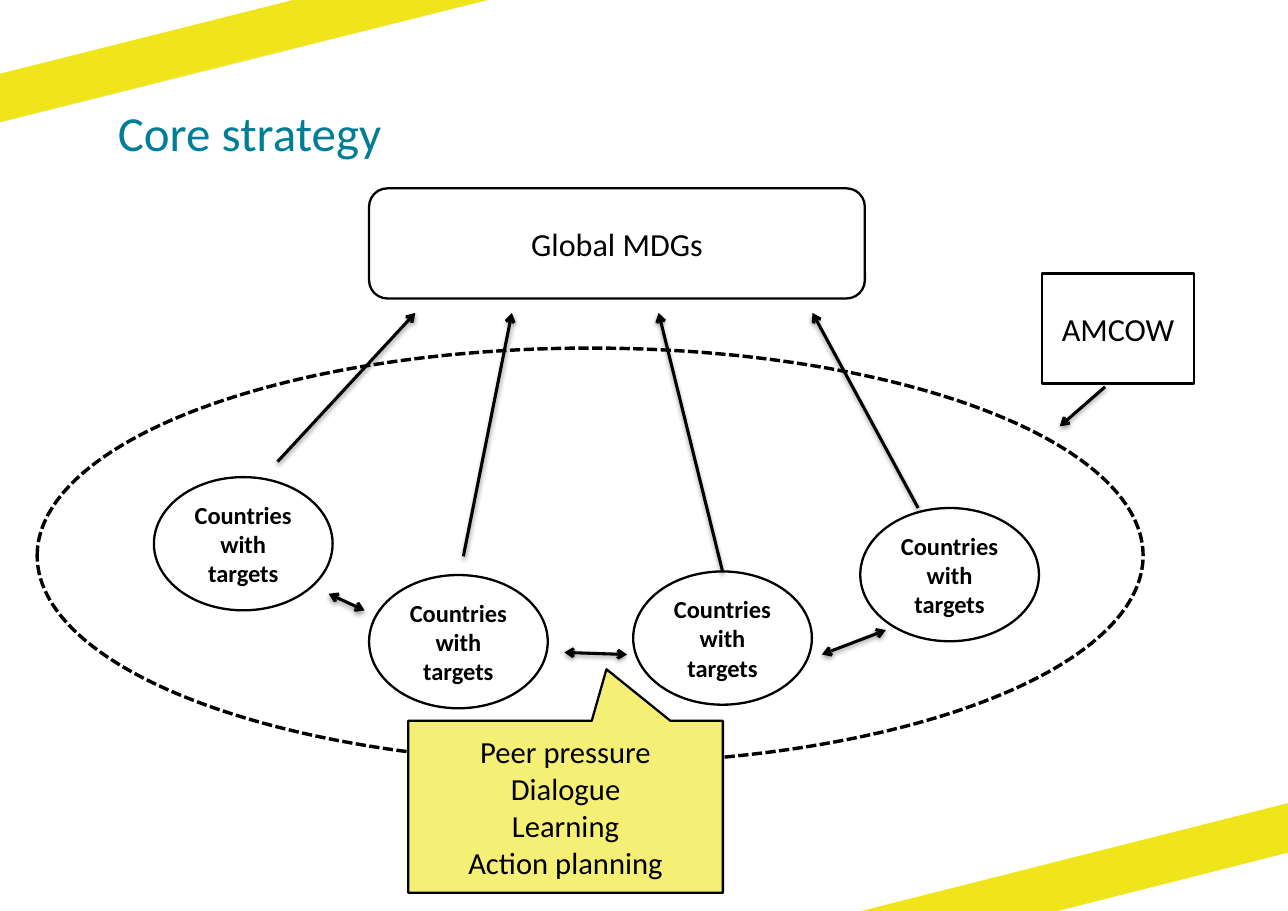
from lxml import etree
from pptx import Presentation
from pptx.dml.color import RGBColor
from pptx.enum.dml import MSO_LINE
from pptx.enum.shapes import MSO_CONNECTOR, MSO_SHAPE
from pptx.enum.text import MSO_ANCHOR, PP_ALIGN
from pptx.oxml import parse_xml
from pptx.oxml.ns import nsdecls, qn
from pptx.util import Pt

YELLOW = RGBColor(0xF0, 0xE5, 0x1B)
PALE_YELLOW = RGBColor(0xF6, 0xEF, 0x76)
TEAL = RGBColor(0x00, 0x7E, 0x97)
BLACK = RGBColor(0, 0, 0)
WIDTH, HEIGHT = 841.7, 595.4
ARROW_SHADOW = (
    f'<a:effectLst {nsdecls("a")}><a:outerShdw blurRad="40000" dist="20000" '
    'dir="5400000" rotWithShape="0"><a:srgbClr val="000000">'
    '<a:alpha val="38000"/></a:srgbClr></a:outerShdw></a:effectLst>')

prs = Presentation()
prs.slide_width, prs.slide_height = Pt(WIDTH), Pt(HEIGHT)
s = prs.slides.add_slide(prs.slide_layouts[6])


def add_box(kind, box, lines=(), size=21, bold=False, fill=None, width=1.5):
    """Add an outlined shape with centred paragraphs."""
    sp = s.shapes.add_shape(kind, *map(Pt, box))
    sp.shadow.inherit = False
    if fill is None:
        sp.fill.background()
    else:
        sp.fill.solid()
        sp.fill.fore_color.rgb = fill
    sp.line.color.rgb = BLACK
    sp.line.width = Pt(width)
    tf = sp.text_frame
    tf.word_wrap = True
    tf.vertical_anchor = MSO_ANCHOR.MIDDLE
    tf.text = "\n".join(lines)
    for p in tf.paragraphs:
        p.alignment = PP_ALIGN.CENTER
        p.font.name, p.font.size = "Calibri", Pt(size)
        for r in p.runs:
            r.font.name, r.font.size, r.font.bold = "Calibri", Pt(size), bold
            r.font.color.rgb = BLACK
    return sp


def add_arrow(start, end, ends=("tailEnd",)):
    c = s.shapes.add_connector(MSO_CONNECTOR.STRAIGHT, *map(Pt, start + end))
    c.line.color.rgb = BLACK
    c.line.width = Pt(2)
    sp_pr = c._element.spPr
    for tag in ends:
        etree.SubElement(sp_pr.find(qn("a:ln")), qn(f"a:{tag}"), type="arrow")
    sp_pr.append(parse_xml(ARROW_SHADOW))
    return c


# Corner bands
for first, *rest in (
    [(191.5, 0), (0, 48.2), (0, 79.9), (319, 0)],
    [(563, HEIGHT), (691.2, HEIGHT), (WIDTH, 557.3), (WIDTH, 524.9)],
):
    outline = s.shapes.build_freeform(Pt(first[0]), Pt(first[1]))
    outline.add_line_segments([(Pt(x), Pt(y)) for x, y in rest])
    band = outline.convert_to_shape()
    band.shadow.inherit = False
    band.fill.solid()
    band.fill.fore_color.rgb = YELLOW
    band.line.fill.background()

# Title
title = s.shapes.add_textbox(Pt(77), Pt(67), Pt(716.4), Pt(81.4))
tf = title.text_frame
tf.word_wrap = True
tf.margin_left = tf.margin_top = tf.margin_right = tf.margin_bottom = 0
tf.text = "Core strategy"
r = tf.paragraphs[0].runs[0]
r.font.name, r.font.size = "Calibri", Pt(32)
r.font.color.rgb = TEAL

# Goals, countries and the region around them
add_box(MSO_SHAPE.ROUNDED_RECTANGLE, (241.2, 123.1, 324, 72), ["Global MDGs"])
countries = [
    add_box(MSO_SHAPE.OVAL, (x, y, 116.8, 87.1), ["Countries with targets"],
            size=16, bold=True)
    for x, y in [(100.6, 311.8), (241.2, 375.8), (413.8, 373.5), (562.2, 332)]
]
region = add_box(MSO_SHAPE.OVAL, (24.3, 227.5, 722.7, 271.4), width=2.25)
region.line.dash_style = MSO_LINE.SQUARE_DOT
add_box(MSO_SHAPE.RECTANGLE, (681.1, 178.7, 99, 72), ["AMCOW"])
add_arrow((722.2, 252.8), (692.6, 278.6))

# Countries report up to the global goals
GOALS_Y = 204.5
up_arrows = [
    add_arrow(start, (end_x, GOALS_Y))
    for start, end_x in [((181.4, 301.7), 271.4), ((302.8, 363.6), 334.5),
                         ((472.2, 373.5), 430.4), ((600, 332), 531)]
]
up_arrows[2].begin_connect(countries[2], 0)

# Exchange between neighbouring countries
for start, end in [((214.8, 388.1), (238.3, 399)),
                   ((368.8, 426.4), (409.8, 427.8)),
                   ((537.1, 427.8), (578.9, 411.8))]:
    add_arrow(start, end, ("headEnd", "tailEnd"))

callout = add_box(
    MSO_SHAPE.RECTANGULAR_CALLOUT, (266.8, 471.1, 205.6, 112.4),
    ["Peer pressure", "Dialogue", "Learning", "Action planning"],
    size=20, fill=PALE_YELLOW)
callout.adjustments[0], callout.adjustments[1] = 0.13, -0.8

prs.save("out.pptx")
